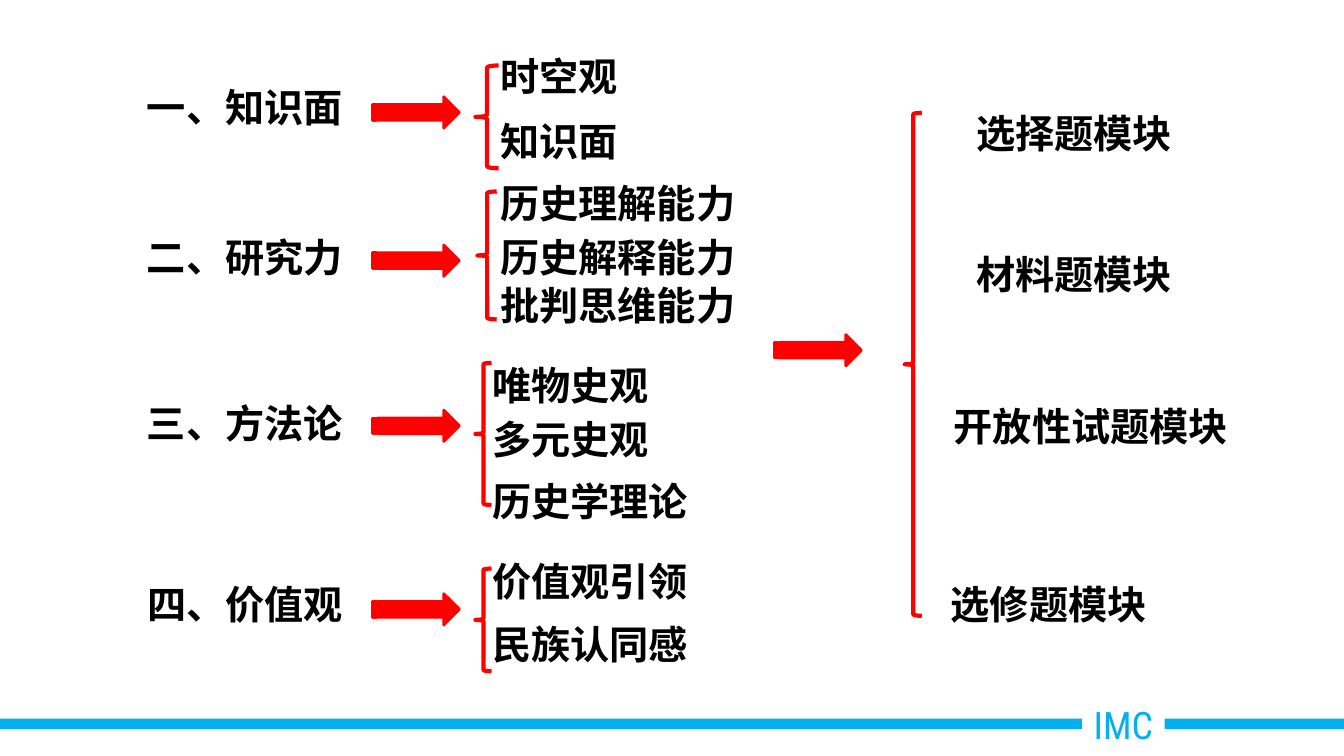
from pptx import Presentation
from pptx.dml.color import RGBColor
from pptx.enum.shapes import MSO_SHAPE
from pptx.enum.text import MSO_ANCHOR, PP_ALIGN
from pptx.util import Pt

RED, BLUE, BLACK, WHITE = "FF0000", "00B0F0", "000000", "FFFFFF"

# Each stage: heading, (top, width), arrow top, brace frame, points left,
# and points as (text, top, width)
STAGES = [
    ("一、知识面", (56.2, 230.4), 69.1, (339.8, 46.8, 16.6, 73.4), 350.6,
     [("时空观", 33.8, 118.1), ("知识面", 80.6, 114.5)]),
    ("二、研究力", (163.4, 247.7), 175, (341.3, 136.8, 13.7, 91.4), 350.6,
     [("历史理解能力", 124.6, 214.6), ("历史解释能力", 163.4, 184.3),
      ("批判思维能力", 197.3, 286.6)]),
    ("三、方法论", (281.5, 264.2), 293, (339.8, 259.2, 11.5, 101.5), 344.9,
     [("唯物史观", 254.2, 320.4), ("多元史观", 293, 331.9),
      ("历史学理论", 337.7, 264.2)]),
    ("四、价值观", (411.1, 236.2), 424.1, (339.8, 406.1, 11.5, 73.4), 344.9,
     [("价值观引领", 394.6, 224.6), ("民族认同感", 439.2, 241.9)]),
]
MODULES = [
    ("选择题模块", 690.5, 74.9, 177.8),
    ("材料题模块", 690.5, 175, 205.9),
    ("开放性试题模块", 674.6, 283.7, 236.9),
    ("选修题模块", 672.5, 411.1, 213.8),
]


def color(value):
    return RGBColor.from_string(value)


def write(frame, text, size=28, font="Arial", ink=BLACK, bold=True,
          align=PP_ALIGN.LEFT, anchor=MSO_ANCHOR.TOP):
    frame.vertical_anchor = anchor
    para = frame.paragraphs[0]
    para.alignment = align
    span = para.add_run()
    span.text = text
    span.font.size = Pt(size)
    span.font.name = font
    span.font.bold = bold
    span.font.color.rgb = color(ink)


class Sketch:
    line_height = 41

    def __init__(self, page):
        self.page = page

    def shape(self, kind, left, top, width, height, fill=None, line=None, weight=0):
        shape = self.page.shapes.add_shape(
            kind, Pt(left), Pt(top), Pt(width), Pt(height))
        shape.shadow.inherit = False
        if fill:
            shape.fill.solid()
            shape.fill.fore_color.rgb = color(fill)
        else:
            shape.fill.background()
        if line:
            shape.line.color.rgb = color(line)
            shape.line.width = Pt(weight)
        else:
            shape.line.fill.background()
        return shape

    def label(self, text, left, top, width):
        box = self.page.shapes.add_textbox(
            Pt(left), Pt(top), Pt(width), Pt(self.line_height))
        box.text_frame.word_wrap = True
        write(box.text_frame, text)

    def arrow(self, left, top):
        self.shape(MSO_SHAPE.STRIPED_RIGHT_ARROW, left, top, 61.9, 22.3,
                   fill=RED, line=RED, weight=2)

    def brace(self, left, top, width, height):
        self.shape(MSO_SHAPE.LEFT_BRACE, left, top, width, height,
                   line=RED, weight=3)

    def footer(self, text):
        self.shape(MSO_SHAPE.RECTANGLE, 0, 513.4, 960.5, 7.2, fill=BLUE)
        tag = self.shape(MSO_SHAPE.RECTANGLE, 773.3, 496.8, 59, 41, fill=WHITE)
        tag.text_frame.word_wrap = False
        write(tag.text_frame, text, size=27, font="Roboto Condensed", ink=BLUE,
              bold=False, align=PP_ALIGN.CENTER, anchor=MSO_ANCHOR.MIDDLE)


def main():
    deck = Presentation()
    deck.slide_width, deck.slide_height = Pt(960.5), Pt(540)
    sketch = Sketch(deck.slides.add_slide(deck.slide_layouts[6]))
    sketch.footer("IMC")

    # Four stages, each opening into its points
    for heading, (top, width), arrow_top, brace, points_left, points in STAGES:
        sketch.label(heading, 98, top, width)
        sketch.arrow(266.4, arrow_top)
        sketch.brace(*brace)
        for text, point_top, point_width in points:
            sketch.label(text, points_left, point_top, point_width)

    # Exam modules that follow from the stages
    sketch.arrow(553.7, 239)
    sketch.brace(646.6, 80.6, 12.2, 359.3)
    for module in MODULES:
        sketch.label(*module)

    deck.save("out.pptx")


if __name__ == "__main__":
    main()
